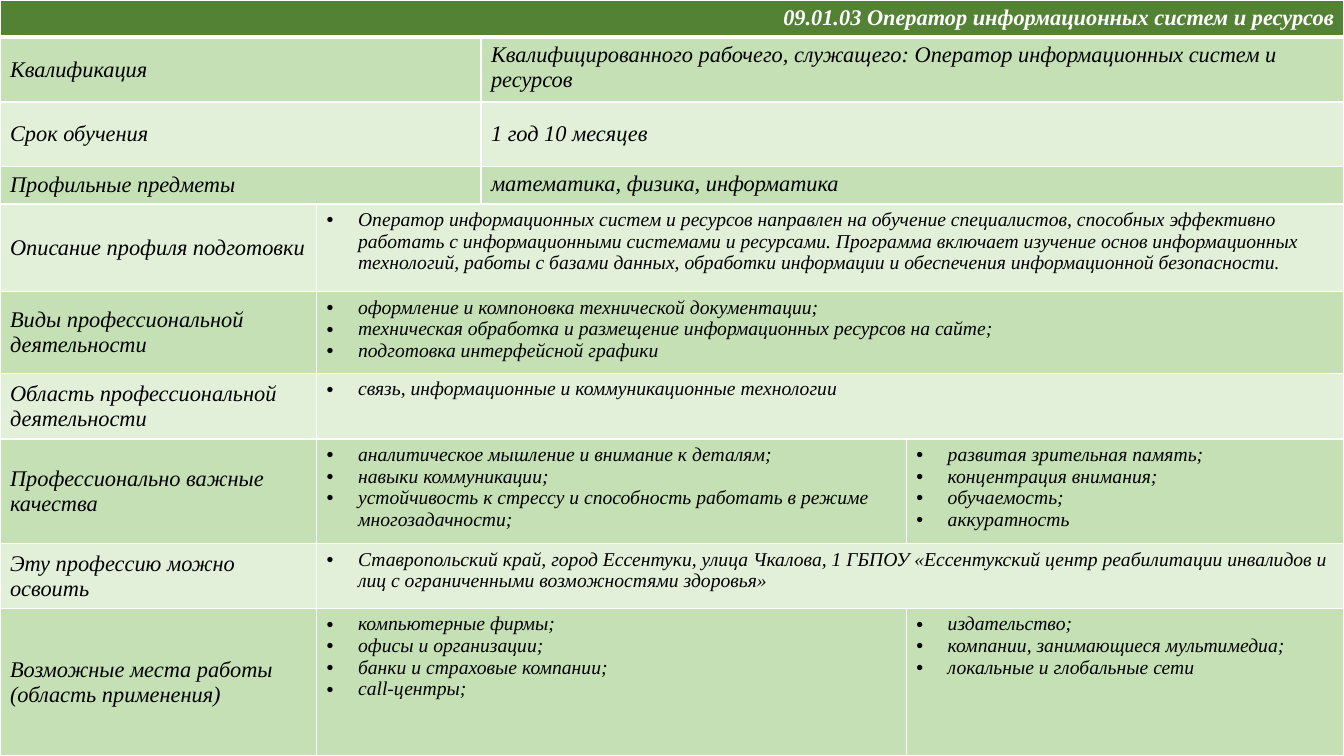
from lxml.etree import SubElement
from pptx import Presentation
from pptx.dml.color import RGBColor as Rgb
from pptx.enum.text import MSO_ANCHOR as Anchor, PP_ALIGN as Align
from pptx.oxml import parse_xml
from pptx.oxml.ns import nsdecls, qn
from pptx.util import Cm, Pt

COLORS = {"head": "548235", "dark": "C5E0B4", "light": "E2F0D9",
          "white": "FFFFFF", "black": "000000"}
COLS = [7.98, 4.14, 10.72, 11.03]
ROWS = [0.94, 1.63, 1.63, 0.94, 2.21, 2.06, 1.65, 2.64, 1.63, 3.72]

TITLE = "09.01.03 Оператор информационных систем и ресурсов"
# Label, value, anchor of the value
FACTS = [
    ("Квалификация",
     "Квалифицированного рабочего, служащего: Оператор информационных систем "
     "и ресурсов", Anchor.TOP),
    ("Срок обучения", "1 год 10 месяцев", Anchor.MIDDLE),
    ("Профильные предметы", "математика, физика, информатика", Anchor.TOP),
]
# Label, then one or two bullet lists
DETAILS = [
    ("Описание профиля подготовки",
     ["Оператор информационных систем и ресурсов направлен на обучение "
      "специалистов, способных эффективно работать с информационными системами "
      "и ресурсами. Программа включает изучение основ информационных технологий, "
      "работы с базами данных, обработки информации и обеспечения "
      "информационной безопасности."]),
    ("Виды профессиональной деятельности",
     ["оформление и компоновка технической документации;",
      "техническая обработка и размещение информационных ресурсов на сайте;",
      "подготовка интерфейсной графики"]),
    ("Область профессиональной деятельности",
     ["связь, информационные и коммуникационные технологии"]),
    ("Профессионально важные качества",
     ["аналитическое мышление и внимание к деталям;",
      "навыки коммуникации;",
      "устойчивость к стрессу и способность работать в режиме многозадачности;"],
     ["развитая зрительная память;", "концентрация внимания;",
      "обучаемость;", "аккуратность"]),
    ("Эту профессию можно освоить",
     ["Ставропольский край, город Ессентуки, улица Чкалова, 1 ГБПОУ "
      "«Ессентукский центр реабилитации инвалидов и лиц с ограниченными "
      "возможностями здоровья»"]),
    ("Возможные места работы (область применения)",
     ["компьютерные фирмы;", "офисы и организации;",
      "банки и страховые компании;", "call-центры;"],
     ["издательство;", "компании, занимающиеся мультимедиа;",
      "локальные и глобальные сети"]),
]


class Sheet:
    """Draws the profession table on one slide."""

    font = "Times New Roman"

    def __init__(self, slide):
        self.slide = slide

    def grid(self):
        """Add the empty table with its fills and borders."""
        frame = self.slide.shapes.add_table(
            len(ROWS), len(COLS), 0, 0, Cm(sum(COLS)), Cm(sum(ROWS)))
        self.table = table = frame.table
        table.horz_banding = False
        for col, width in zip(table.columns, COLS):
            col.width = Cm(width)
        for num, (row, height) in enumerate(zip(table.rows, ROWS)):
            row.height = Cm(height)
            tone = "head" if num == 0 else "dark" if num % 2 else "light"
            for cell in row.cells:
                cell.fill.solid()
                cell.fill.fore_color.rgb = Rgb.from_string(COLORS[tone])
                self.border(cell, top=3 if num == 1 else 1,
                            bottom=3 if num == 0 else 1)

    def border(self, cell, top, bottom):
        props = cell._tc.get_or_add_tcPr()
        sides = {"L": 1, "R": 1, "T": top, "B": bottom}
        for spot, (side, width) in enumerate(sides.items()):
            props.insert(spot, parse_xml(
                f'<a:ln{side} {nsdecls("a")} w="{Pt(width)}"><a:solidFill>'
                f'<a:srgbClr val="{COLORS["white"]}"/></a:solidFill></a:ln{side}>'))

    def cell(self, row, first, last, lines, size=16, color="black", bold=False,
             align=Align.LEFT, anchor=Anchor.TOP, bullet=False):
        """Fill the cell that spans columns first to last."""
        cell = self.table.cell(row, first)
        if last > first:
            cell.merge(self.table.cell(row, last))
        cell.vertical_anchor = anchor
        frame = cell.text_frame
        for num, line in enumerate(lines):
            para = frame.add_paragraph() if num else frame.paragraphs[0]
            para.text = line
            para.alignment = align
            if bullet:
                self.bullet(para)
            font = para.font
            font.name, font.size = self.font, Pt(size)
            font.bold, font.italic = bold, True
            font.color.rgb = Rgb.from_string(COLORS[color])
            for run in para.runs:
                run.font.name = self.font

    def bullet(self, para):
        props = para._p.get_or_add_pPr()
        indent = Cm(0.79)
        props.set("marL", str(indent))
        props.set("indent", str(-indent))
        SubElement(props, qn("a:buFont"), typeface="Arial")
        SubElement(props, qn("a:buChar"), char="•")

    def label(self, row, last, text):
        self.cell(row, 0, last, [text], anchor=Anchor.MIDDLE)

    def fact(self, row, name, value, anchor):
        self.label(row, 1, name)
        self.cell(row, 2, 3, [value], anchor=anchor)

    def detail(self, row, name, *lists):
        self.label(row, 0, name)
        spans = [(1, 3)] if len(lists) == 1 else [(1, 2), (3, 3)]
        for (first, last), lines in zip(spans, lists):
            self.cell(row, first, last, lines, size=14, bullet=True)


def main():
    deck = Presentation()
    deck.slide_width, deck.slide_height = Cm(33.87), Cm(19.05)
    sheet = Sheet(deck.slides.add_slide(deck.slide_layouts[6]))
    sheet.grid()
    sheet.cell(0, 0, 3, [TITLE], color="white", bold=True, align=Align.RIGHT)
    for row, fact in enumerate(FACTS, 1):
        sheet.fact(row, *fact)
    for row, detail in enumerate(DETAILS, 1 + len(FACTS)):
        sheet.detail(row, *detail)
    deck.save("out.pptx")


if __name__ == "__main__":
    main()
